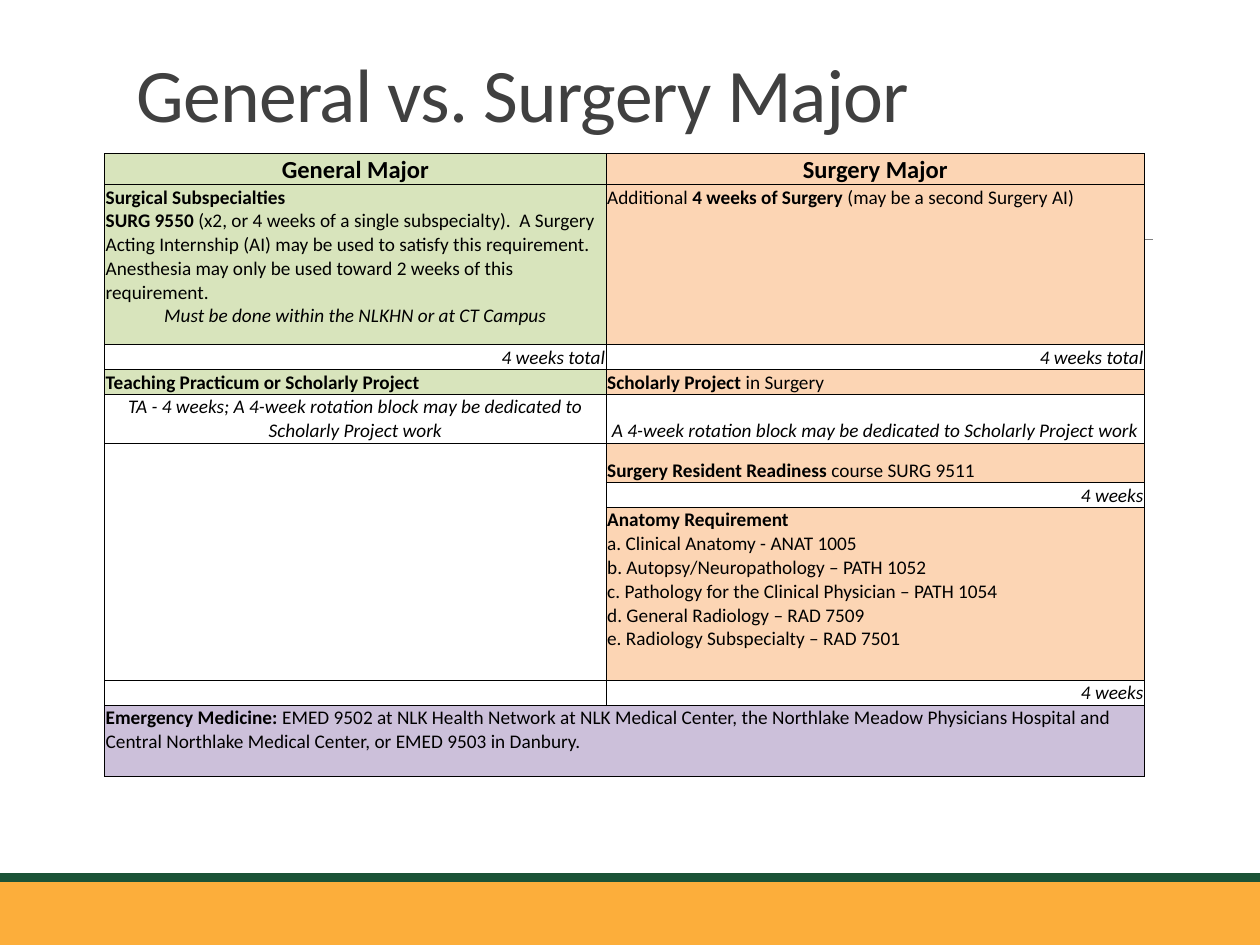
from lxml.etree import SubElement
from pptx import Presentation
from pptx.dml.color import RGBColor
from pptx.enum.shapes import MSO_CONNECTOR, MSO_SHAPE
from pptx.enum.text import MSO_ANCHOR, PP_ALIGN
from pptx.oxml.ns import qn
from pptx.util import Cm, Pt

FONT = "Calibri"
GREEN, PEACH, PURPLE = "D8E4BC", "FCD5B4", "CCC0DA"
LEFT, CENTER, RIGHT = PP_ALIGN.LEFT, PP_ALIGN.CENTER, PP_ALIGN.RIGHT
TOP, BOTTOM = MSO_ANCHOR.TOP, MSO_ANCHOR.BOTTOM
COLUMN_WIDTHS = [10.11, 10.85]
ROW_HEIGHTS = [0.62, 3.23, 0.5, 0.5, 0.98, 0.8, 0.5, 3.48, 0.5, 1.45]

# Each cell: fill, anchor, paragraphs; each paragraph: alignment, then (text, style) runs
EMPTY = (None, TOP, [])
TOTAL = (None, BOTTOM, [(RIGHT, ("4 weeks total", "i"))])
ROWS = [
    [(GREEN, BOTTOM, [(CENTER, ("General Major", "b"))]),
     (PEACH, BOTTOM, [(CENTER, ("Surgery Major", "b"))])],
    [(GREEN, TOP, [
        (LEFT, ("Surgical Subspecialties", "b")),
        (LEFT, ("SURG 9550 ", "b"),
         ("(x2, or 4 weeks of a single subspecialty).  A Surgery Acting "
          "Internship (AI) may be used to satisfy this requirement. Anesthesia "
          "may only be used toward 2 weeks of this requirement.", "")),
        (CENTER, ("Must be done within the NLKHN or at CT Campus", "i"))]),
     (PEACH, TOP, [(LEFT, ("Additional ", ""), ("4 weeks of Surgery", "b"),
                    (" (may be a second Surgery AI)", ""))])],
    [TOTAL, TOTAL],
    [(GREEN, BOTTOM, [(LEFT, ("Teaching Practicum or Scholarly Project", "b"))]),
     (PEACH, BOTTOM, [(LEFT, ("Scholarly Project", "b"), (" in Surgery", ""))])],
    [(None, BOTTOM, [(CENTER, ("TA - 4 weeks; A 4-week rotation block may be "
                               "dedicated to Scholarly Project work", "i"))]),
     (None, BOTTOM, [(CENTER, ("A 4-week rotation block may be dedicated to "
                               "Scholarly Project work", "i"))])],
    [EMPTY,
     (PEACH, BOTTOM, [(LEFT, ("Surgery Resident Readiness", "b"),
                       (" course SURG 9511", ""))])],
    [EMPTY, (None, BOTTOM, [(RIGHT, ("4 weeks", "i"))])],
    [EMPTY, (PEACH, TOP, [
        (LEFT, ("Anatomy Requirement", "b")),
        (LEFT, ("a. Clinical Anatomy - ANAT 1005", "")),
        (LEFT, ("b. Autopsy/Neuropathology – PATH 1052", "")),
        (LEFT, ("c. Pathology for the Clinical Physician – PATH 1054", "")),
        (LEFT, ("d. General Radiology – RAD 7509", "")),
        (LEFT, ("e. Radiology Subspecialty – RAD 7501", ""))])],
    [EMPTY, (None, TOP, [(RIGHT, ("4 weeks", "i"))])],
    [(PURPLE, TOP, [
        (LEFT, ("Emergency Medicine: ", "b"),
         ("EMED 9502 at NLK Health Network at NLK Medical Center, the Northlake "
          "Meadow Physicians Hospital and Central Northlake Medical Center, or "
          "EMED 9503 in Danbury.", ""))]),
     EMPTY],
]
# Sides left open so that three empty cells read as one
OPEN_SIDES = {(5, 0): "B", (6, 0): "TB", (7, 0): "T"}


def color(value):
    return RGBColor.from_string(value)


def format_run(run, size, value, style=""):
    run.font.name = FONT
    run.font.size = Pt(size)
    run.font.color.rgb = color(value)
    run.font.bold = "b" in style
    run.font.italic = "i" in style


def add_band(slide, top, height, fill):
    band = slide.shapes.add_shape(MSO_SHAPE.RECTANGLE, 0, Cm(top), Cm(25.4), Cm(height))
    band.shadow.inherit = False
    band.fill.solid()
    band.fill.fore_color.rgb = color(fill)
    band.line.fill.background()


def add_rule(slide):
    rule = slide.shapes.add_connector(
        MSO_CONNECTOR.STRAIGHT, Cm(2.49), Cm(4.83), Cm(23.24), Cm(4.83))
    rule.line.color.rgb = color("808080")
    rule.line.width = Pt(0.5)
    SubElement(rule.element.spPr, qn("a:effectLst"))


def add_title(slide, text):
    box = slide.shapes.add_textbox(Cm(2.51), Cm(0.97), Cm(20.96), Cm(1.93))
    frame = box.text_frame
    frame.word_wrap = True
    frame.vertical_anchor = BOTTOM
    frame.text = text
    paragraph = frame.paragraphs[0]
    paragraph.line_spacing = 0.85
    run = paragraph.runs[0]
    format_run(run, 43.2, "404040")
    run.font._element.set("spc", "-50")


def set_borders(cell, open_sides):
    properties = cell._tc.get_or_add_tcPr()
    for side in "LRTB":
        line = SubElement(properties, qn(f"a:ln{side}"), w=str(Pt(0.5)))
        if side in open_sides:
            SubElement(line, qn("a:noFill"))
        else:
            fill = SubElement(line, qn("a:solidFill"))
            SubElement(fill, qn("a:srgbClr"), val="000000")


def fill_cell(cell, content, size, open_sides):
    fill, anchor, paragraphs = content
    cell.margin_left = cell.margin_right = cell.margin_top = Cm(0.02)
    cell.margin_bottom = 0
    cell.vertical_anchor = anchor
    set_borders(cell, open_sides)
    if fill:
        cell.fill.solid()
        cell.fill.fore_color.rgb = color(fill)
    else:
        cell.fill.background()
    frame = cell.text_frame
    if not paragraphs:
        # Keep an empty cell from stretching its row
        SubElement(frame.paragraphs[0]._p, qn("a:endParaRPr"), sz=str(size * 100))
    for index, (alignment, *runs) in enumerate(paragraphs):
        paragraph = frame.add_paragraph() if index else frame.paragraphs[0]
        paragraph.alignment = alignment
        for text, style in runs:
            run = paragraph.add_run()
            run.text = text
            format_run(run, size, "000000", style)


def add_comparison(slide):
    table = slide.shapes.add_table(
        len(ROWS), len(COLUMN_WIDTHS), Cm(2.11), Cm(3.1),
        Cm(sum(COLUMN_WIDTHS)), Cm(sum(ROW_HEIGHTS))).table
    table.first_row = table.horz_banding = False
    for column, width in zip(table.columns, COLUMN_WIDTHS):
        column.width = Cm(width)
    for row, height in zip(table.rows, ROW_HEIGHTS):
        row.height = Cm(height)
    for row_index, row in enumerate(ROWS):
        for column_index, content in enumerate(row):
            fill_cell(table.cell(row_index, column_index), content,
                      11 if row_index else 14,
                      OPEN_SIDES.get((row_index, column_index), ""))
    last = len(ROWS) - 1
    table.cell(last, 0).merge(table.cell(last, 1))


def main():
    presentation = Presentation()
    presentation.slide_width = Cm(25.4)
    presentation.slide_height = Cm(19.05)
    slide = presentation.slides.add_slide(presentation.slide_layouts[6])
    # Footer bands and rule
    add_band(slide, 17.78, 1.27, "FCAE3B")
    add_band(slide, 17.6, 0.18, "1B5337")
    add_rule(slide)
    # Title and comparison table
    add_title(slide, "General vs. Surgery Major")
    add_comparison(slide)
    presentation.save("out.pptx")


if __name__ == "__main__":
    main()
